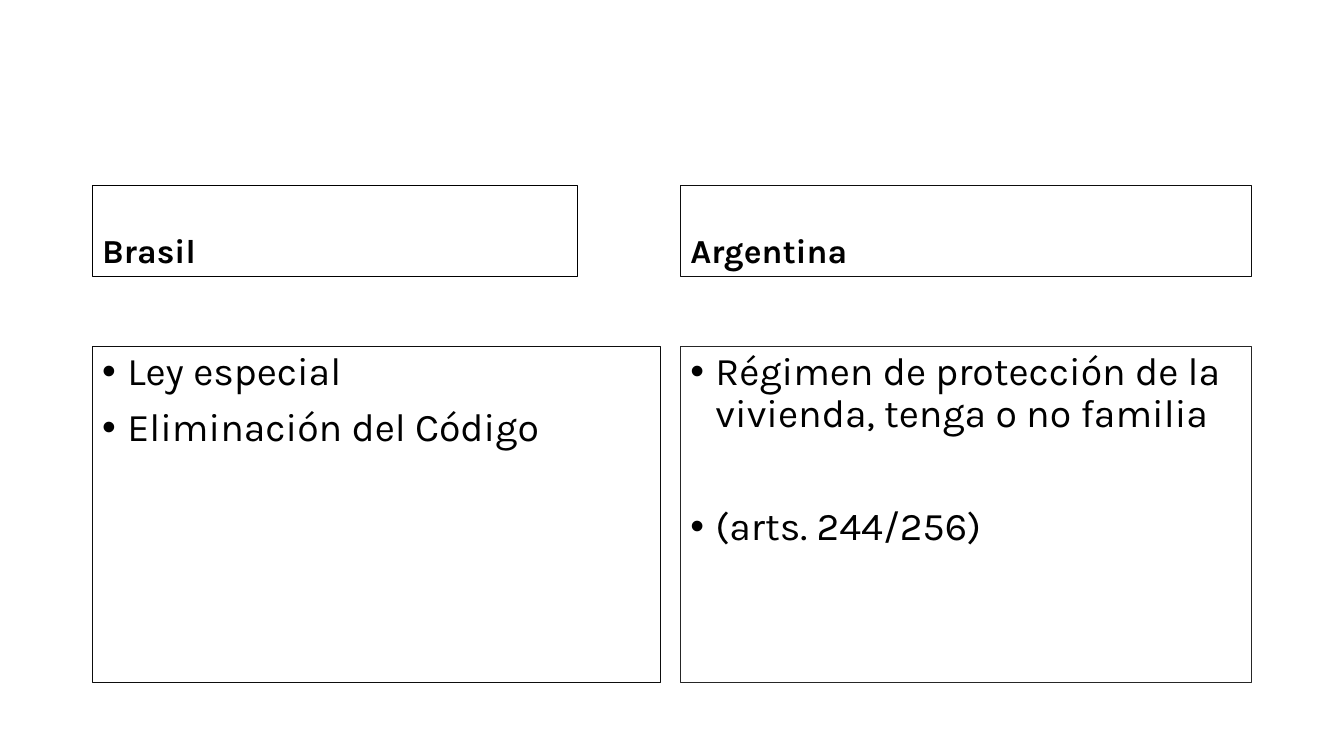
from dataclasses import dataclass

from lxml import etree
from pptx import Presentation
from pptx.dml.color import RGBColor
from pptx.enum import text
from pptx.oxml.ns import qn
from pptx.util import Pt

FONT = "Karla"
COLORS = {"text": "000000", "black": "000000", "dark": "0D0D0D", "gray": "262626"}
INDENT = 18

# Rows and columns shared by the boxes
HEADING_TOP, HEADING_HEIGHT = 132.5, 64.8
BODY_TOP, BODY_HEIGHT = 247.7, 239.8
LEFT, RIGHT, RIGHT_WIDTH = 65.9, 486, 408.2


@dataclass
class Line:
    content: str
    space_before: float = 0


@dataclass
class Panel:
    left: float
    top: float
    width: float
    height: float
    border: str
    lines: list[Line]
    heading: bool = False


PANELS = [
    Panel(LEFT, HEADING_TOP, 346.3, HEADING_HEIGHT, "black", [Line("Brasil")], heading=True),
    Panel(LEFT, BODY_TOP, 406.1, BODY_HEIGHT, "dark",
          [Line("Ley especial"), Line("Eliminación del Código", 10)]),
    Panel(RIGHT, HEADING_TOP, RIGHT_WIDTH, HEADING_HEIGHT, "dark",
          [Line("Argentina")], heading=True),
    Panel(RIGHT, BODY_TOP, RIGHT_WIDTH, BODY_HEIGHT, "gray",
          [Line("Régimen de protección de la vivienda, tenga o no familia"),
           Line("(arts. 244/256)", 50.4)]),
]


def color(name: str) -> RGBColor:
    return RGBColor.from_string(COLORS[name])


def write(para, content: str, *, size: float, bold: bool = False,
          bullet: bool = False, space_before: float = 0) -> None:
    """Fill a paragraph with formatted text."""
    para.line_spacing = 0.9
    para.space_before = Pt(space_before)
    if bullet:
        properties = para._p.get_or_add_pPr()
        properties.set("marL", str(Pt(INDENT)))
        properties.set("indent", str(-Pt(INDENT)))
        etree.SubElement(properties, qn("a:buFont")).set("typeface", "Arial")
        etree.SubElement(properties, qn("a:buChar")).set("char", "•")
    span = para.add_run()
    span.text = content
    span.font.name = FONT
    span.font.size = Pt(size)
    span.font.bold = bold
    span.font.color.rgb = color("text")


def draw_panel(page, panel: Panel) -> None:
    """Draw an outlined text box."""
    box = page.shapes.add_textbox(Pt(panel.left), Pt(panel.top),
                                  Pt(panel.width), Pt(panel.height))
    box.line.color.rgb = color(panel.border)
    box.line.width = Pt(0.75)
    frame = box.text_frame
    frame.word_wrap = True
    frame.vertical_anchor = (text.MSO_ANCHOR.BOTTOM if panel.heading
                             else text.MSO_ANCHOR.TOP)
    for index, line in enumerate(panel.lines):
        para = frame.add_paragraph() if index else frame.paragraphs[0]
        write(para, line.content, size=24 if panel.heading else 28, bold=panel.heading,
              bullet=not panel.heading, space_before=line.space_before)


def main() -> None:
    deck = Presentation()
    deck.slide_width, deck.slide_height = Pt(960), Pt(540)
    page = deck.slides.add_slide(deck.slide_layouts[6])
    for panel in PANELS:
        draw_panel(page, panel)
    deck.save("out.pptx")


if __name__ == "__main__":
    main()
